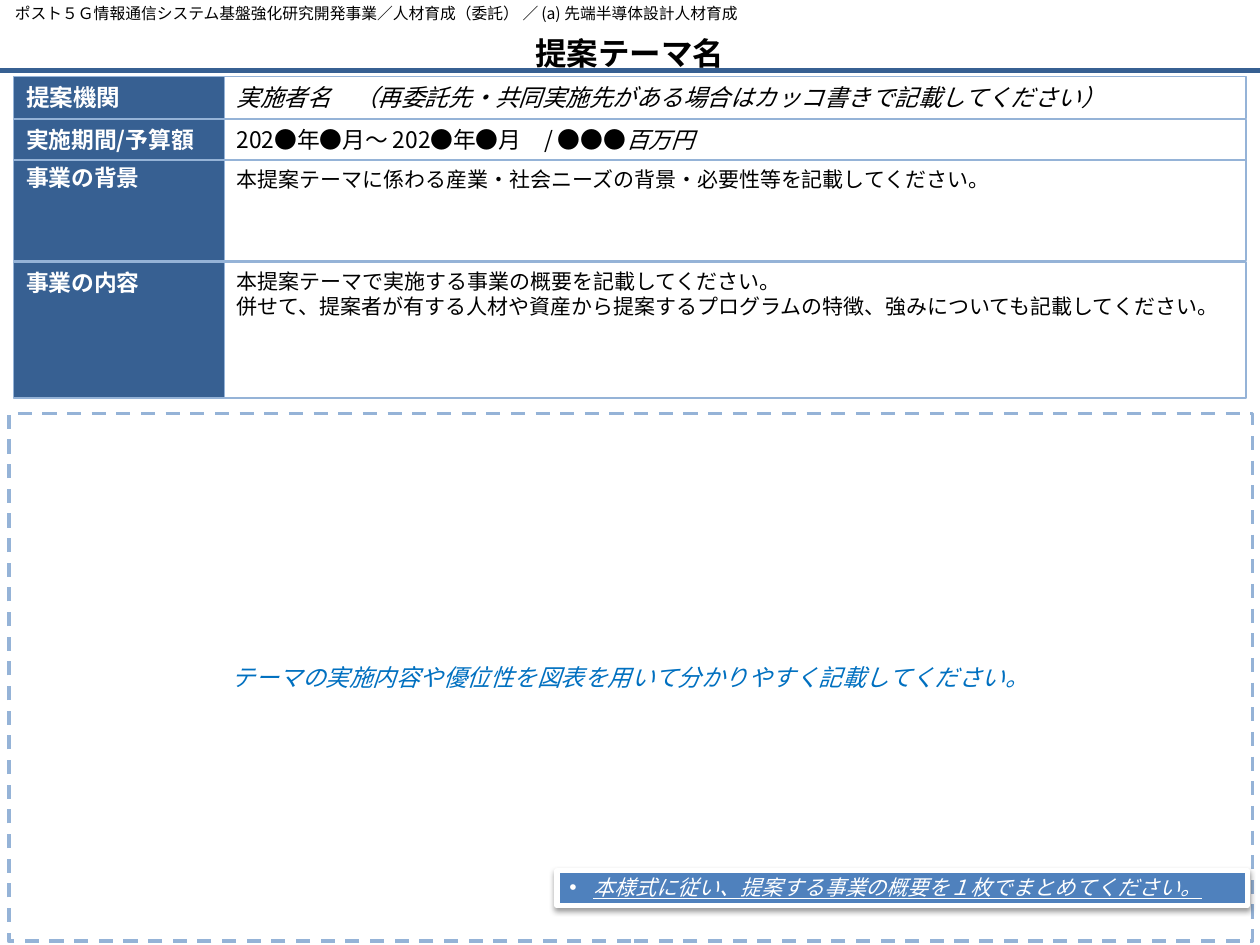
from lxml import etree
from pptx import Presentation
from pptx import util as u
from pptx.dml.color import RGBColor
from pptx.enum import dml, shapes, text
from pptx.oxml import parse_xml
from pptx.oxml.ns import nsdecls, qn

JP = "Noto Sans CJK JP"
NAVY, PALE, WHITE, BLACK = "376092", "95B3D7", "FFFFFF", "000000"


def rgb(value):
    return RGBColor.from_string(value)


def add_box(box, paras, fill=None, line=None, width=0.75, anchor="TOP", align="LEFT", wrap=True, **base):
    """Add a rectangle, or a text box if it has no line; paras lists (text, format) runs."""
    at = [u.Inches(v) for v in box]
    if line:
        sp = s.shapes.add_shape(shapes.MSO_SHAPE.RECTANGLE, *at)
        sp.shadow.inherit = False
        sp.line.color.rgb = rgb(line)
        sp.line.width = u.Pt(width)
    else:
        sp = s.shapes.add_textbox(*at)
    if fill:
        sp.fill.solid()
        sp.fill.fore_color.rgb = rgb(fill)
    else:
        sp.fill.background()
    tf = sp.text_frame
    tf.word_wrap = wrap
    tf.vertical_anchor = getattr(text.MSO_ANCHOR, anchor)
    for i, runs in enumerate(paras):
        p = tf.paragraphs[0] if i == 0 else tf.add_paragraph()
        p.alignment = getattr(text.PP_ALIGN, align)
        for words, extra in runs:
            r = p.add_run()
            r.text = words
            fmt = {"name": JP, "color": BLACK, **base, **extra}
            r.font.color.rgb = rgb(fmt.pop("color"))
            r.font.size = u.Pt(fmt.pop("size"))
            for key, value in fmt.items():
                setattr(r.font, key, value)
            ea = etree.SubElement(r.font._element, qn("a:ea"))
            ea.set("typeface", JP)
    return sp


prs = Presentation()
prs.slide_width, prs.slide_height = u.Inches(10), u.Inches(7.5)
s = prs.slides.add_slide(prs.slide_layouts[6])

add_box((0, 0.22, 10, 0.4), [[("提案テーマ名", {})]], anchor="MIDDLE", align="CENTER", size=18, bold=True)
rule = s.shapes.add_connector(shapes.MSO_CONNECTOR.STRAIGHT, 0, u.Inches(0.56), u.Inches(10), u.Inches(0.56))
rule.line.color.rgb = rgb(NAVY)
rule.line.width = u.Pt(3)
etree.SubElement(rule._element.spPr, qn("a:effectLst"))

add_box((0.02, -0.02, 6.08, 0.25),
        [[("ポスト５Ｇ情報通信システム基盤強化研究開発事業／人材育成（委託） ／ (a) 先端半導体設計人材育成", {})]],
        wrap=False, size=9)

# label, label top, body top, bottom, label size, body size, body paragraphs;
# the period row comes last because it overlaps the background label
rows = [
    ("提案機関", 0.61, 0.61, 0.94, 13.5, 13.5,
     [[("実施者名\u3000（再委託先・共同実施先がある場合はカッコ書きで記載してください）".replace("\u3000", "　"),
        {"italic": True})]]),
    ("事業の背景", 1.25, 1.27, 2.07, 13, 12,
     [[("本提案テーマに係わる産業・社会ニーズの背景・必要性等を記載してください。", {})]]),
    ("事業の内容", 2.08, 2.08, 3.16, 13, 12,
     [[("本提案テーマで実施する事業の概要を記載してください。", {})],
      [("併せて、提案者が有する人材や資産から提案するプログラムの特徴、強みについても記載してください。", {})]]),
    ("実施期間/予算額", 0.95, 0.95, 1.27, 13, 13,
     [[("202●年●月～ 202●年●月　/ ●●●", {}), ("百万円", {"italic": True})]]),
]
for label, label_top, body_top, bottom, label_size, body_size, body in rows:
    add_box((0.11, label_top, 1.67, bottom - label_top), [[(label, {})]],
            fill=NAVY, line=PALE, size=label_size, bold=True, color=WHITE)
    add_box((1.78, body_top, 8.11, bottom - body_top), body, line=PALE, size=body_size)

figure = add_box((0.07, 3.28, 9.87, 4.19),
                 [[("テーマの実施内容や優位性を図表を用いて分かりやすく記載してください。", {})]],
                 line=PALE, width=2, anchor="MIDDLE", align="CENTER", size=13.5, italic=True, color="0070C0")
figure.line.dash_style = dml.MSO_LINE.DASH

note = add_box((4.42, 6.91, 5.48, 0.28),
               [[("本様式に従い、提案する事業の概要を１枚でまとめてください。", {})]],
               fill="4F81BD", line=WHITE, width=3, size=12, name="Arial", italic=True, underline=True, color=WHITE)
p = note.text_frame.paragraphs[0]
p.line_spacing = u.Pt(13)
pPr = p._p.get_or_add_pPr()
pPr.set("marL", str(u.Inches(0.19)))
pPr.set("indent", str(u.Inches(-0.19)))
etree.SubElement(pPr, qn("a:buFont")).set("typeface", "Arial")
etree.SubElement(pPr, qn("a:buChar")).set("char", "•")
note._element.spPr.find(qn("a:effectLst")).append(parse_xml(
    f'<a:outerShdw {nsdecls("a")} blurRad="{u.Pt(3.1)}" dist="{u.Pt(1.6)}" dir="5400000" rotWithShape="0">'
    '<a:srgbClr val="000000"><a:alpha val="38000"/></a:srgbClr></a:outerShdw>'))

prs.save("out.pptx")
